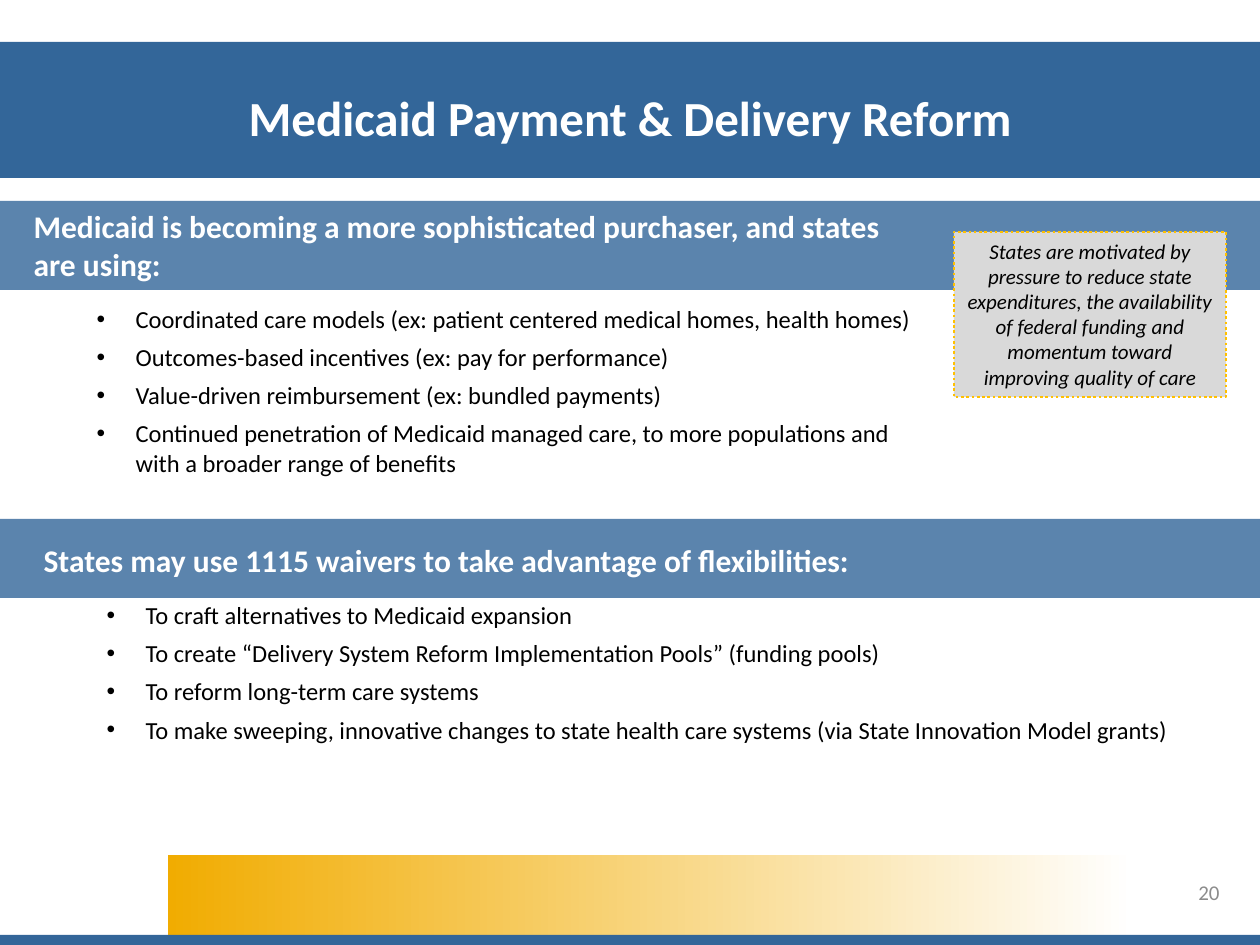
import dataclasses

import lxml.etree
import pptx
import pptx.dml.color
import pptx.enum.dml
import pptx.enum.shapes
import pptx.enum.text
import pptx.oxml.ns
import pptx.util

EMU_PER_PX = 914400 / 126
FONT = "Calibri"
BLUE, GOLD, WHITE, BLACK = "336699", "F1AC01", "FFFFFF", "000000"
ALIGN = pptx.enum.text.PP_ALIGN
ANCHOR = pptx.enum.text.MSO_ANCHOR


@dataclasses.dataclass
class Box:
    left: int
    top: int
    width: int
    height: int


@dataclasses.dataclass
class Bar:
    box: Box
    opacity: int = 100
    fade_from: str = ""


@dataclasses.dataclass
class Section:
    box: Box
    heading: str
    items: list[str]


BARS = [
    Bar(Box(168, 855, 966, 80), fade_from=GOLD),
    Bar(Box(0, 935, 1260, 10)),
    Bar(Box(0, 42, 1260, 136)),
    Bar(Box(0, 519, 1260, 79), opacity=80),
    Bar(Box(0, 201, 1260, 89), opacity=80),
]

SECTIONS = [
    Section(
        Box(21, 201, 916, 285),
        "Medicaid is becoming a more sophisticated purchaser, and states are using:",
        [
            "Coordinated care models (ex: patient centered medical homes, health homes)",
            "Outcomes-based incentives (ex: pay for performance)",
            "Value-driven reimbursement (ex: bundled payments)",
            "Continued penetration of Medicaid managed care, to more populations "
            "and with a broader range of benefits",
        ],
    ),
    Section(
        Box(31, 535, 1181, 218),
        "States may use 1115 waivers to take advantage of flexibilities:",
        [
            "To craft alternatives to Medicaid expansion",
            "To create “Delivery System Reform Implementation Pools” (funding pools)",
            "To reform long-term care systems",
            "To make sweeping, innovative changes to state health care systems "
            "(via State Innovation Model grants)",
        ],
    ),
]


def px(length: int) -> int:
    return round(length * EMU_PER_PX)


def color(value: str):
    return pptx.dml.color.RGBColor.from_string(value)


def place(shape, box: Box) -> None:
    shape.left, shape.top = px(box.left), px(box.top)
    shape.width, shape.height = px(box.width), px(box.height)


def prepare_frame(shape, anchor=ANCHOR.TOP):
    frame = shape.text_frame
    frame.word_wrap = True
    frame.auto_size = pptx.enum.text.MSO_AUTO_SIZE.NONE
    frame.vertical_anchor = anchor
    return frame


def write(paragraph, text: str, *, size: int, fill: str = BLACK, bold: bool = False,
          italic: bool = False, align=ALIGN.LEFT, after: int = 0, level: int = 0,
          margin: int = 0, hanging: int = 0, bullet: str = "") -> None:
    properties = paragraph._p.get_or_add_pPr()
    properties.set("marL", str(px(margin)))
    properties.set("indent", str(-px(hanging)))
    qualified = pptx.oxml.ns.qn
    if bullet:
        lxml.etree.SubElement(properties, qualified("a:buFont")).set("typeface", "Arial")
        lxml.etree.SubElement(properties, qualified("a:buChar")).set("char", bullet)
    else:
        lxml.etree.SubElement(properties, qualified("a:buNone"))
    paragraph.level = level
    paragraph.alignment = align
    paragraph.space_before = pptx.util.Pt(0)
    paragraph.space_after = pptx.util.Pt(after)
    run = paragraph.add_run()
    run.text = text
    run.font.name = FONT
    run.font.size = pptx.util.Pt(size)
    run.font.bold = bold
    run.font.italic = italic
    run.font.color.rgb = color(fill)


def add_rectangle(slide, box: Box):
    shape = slide.shapes.add_shape(
        pptx.enum.shapes.MSO_SHAPE.RECTANGLE,
        px(box.left), px(box.top), px(box.width), px(box.height))
    shape.shadow.inherit = False
    return shape


def add_bar(slide, bar: Bar) -> None:
    shape = add_rectangle(slide, bar.box)
    shape.line.fill.background()
    if bar.fade_from:
        shape.fill.gradient()
        shape.fill.gradient_angle = 0
        for stop, value, position in zip(
                shape.fill.gradient_stops, (bar.fade_from, WHITE), (0, 1)):
            stop.color.rgb = color(value)
            stop.position = position
    else:
        shape.fill.solid()
        shape.fill.fore_color.rgb = color(BLUE)
    if bar.opacity < 100:
        value = shape.element.spPr.find(".//" + pptx.oxml.ns.qn("a:srgbClr"))
        alpha = lxml.etree.SubElement(value, pptx.oxml.ns.qn("a:alpha"))
        alpha.set("val", str(bar.opacity * 1000))
    slide.shapes.title.element.addprevious(shape.element)


def fill_section(placeholder, section: Section) -> None:
    place(placeholder, section.box)
    frame = prepare_frame(placeholder)
    write(frame.paragraphs[0], section.heading, size=18, fill=WHITE, bold=True, after=12)
    for item in section.items:
        write(frame.add_paragraph(), item, size=14, after=5, level=1,
              margin=102, hanging=39, bullet="•")


def add_callout(slide, box: Box, text: str) -> None:
    shape = add_rectangle(slide, box)
    shape.fill.solid()
    shape.fill.fore_color.rgb = color("D9D9D9")
    shape.line.color.rgb = color("FFC000")
    shape.line.width = pptx.util.Pt(1.5)
    shape.line.dash_style = pptx.enum.dml.MSO_LINE.ROUND_DOT
    write(prepare_frame(shape).paragraphs[0], text, size=12, italic=True, align=ALIGN.CENTER)


def add_page_number(slide, box: Box, text: str) -> None:
    shape = slide.shapes.add_textbox(0, 0, 0, 0)
    place(shape, box)
    write(prepare_frame(shape, ANCHOR.MIDDLE).paragraphs[0], text,
          size=12, fill="8C8C8C", align=ALIGN.RIGHT)


def main() -> None:
    presentation = pptx.Presentation()
    presentation.slide_width, presentation.slide_height = px(1260), px(945)
    slide = presentation.slides.add_slide(
        presentation.slide_layouts.get_by_name("Two Content"))
    for bar in BARS:
        add_bar(slide, bar)
    title = slide.shapes.title
    place(title, Box(63, 38, 1134, 158))
    write(prepare_frame(title, ANCHOR.MIDDLE).paragraphs[0],
          "Medicaid Payment & Delivery Reform",
          size=28, fill=WHITE, bold=True, align=ALIGN.CENTER)
    for index, section in enumerate(SECTIONS, start=1):
        fill_section(slide.placeholders[index], section)
    add_page_number(slide, Box(970, 861, 262, 63), "20")
    add_callout(
        slide, Box(954, 232, 272, 165),
        "States are motivated by pressure to reduce state expenditures, the availability "
        "of federal funding and momentum toward improving quality of care")
    presentation.save("out.pptx")


if __name__ == "__main__":
    main()
